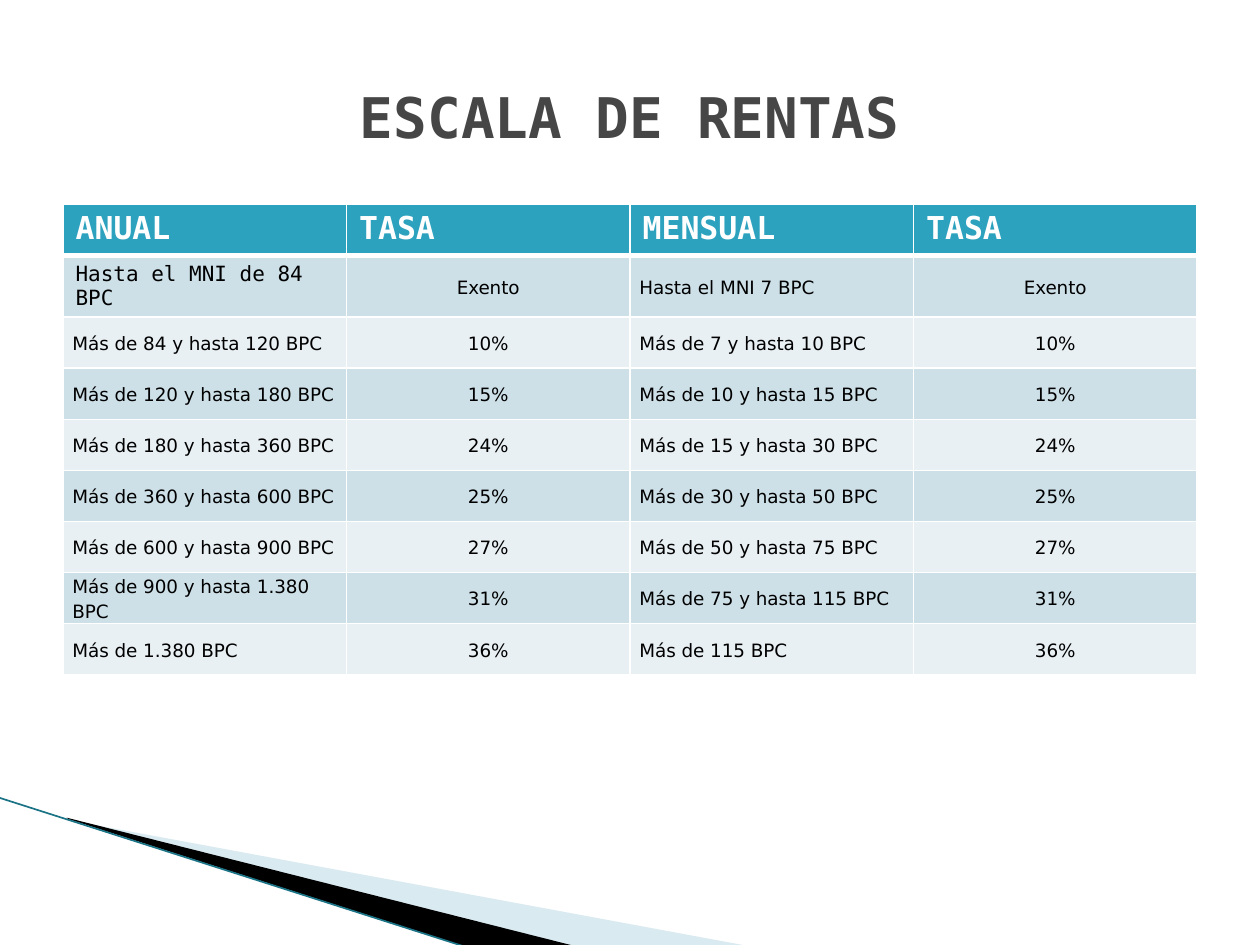
from dataclasses import dataclass
from typing import NamedTuple

from lxml import etree
from pptx import Presentation
from pptx.dml.color import RGBColor
from pptx.enum.shapes import MSO_CONNECTOR
from pptx.enum.text import MSO_ANCHOR, MSO_AUTO_SIZE, PP_ALIGN
from pptx.oxml.ns import qn
from pptx.util import Inches, Pt

LEFT, CENTER = PP_ALIGN.LEFT, PP_ALIGN.CENTER
TOP, MIDDLE = MSO_ANCHOR.TOP, MSO_ANCHOR.MIDDLE
STRAIGHT = MSO_CONNECTOR.STRAIGHT
TITLE_ONLY = 5


@dataclass(frozen=True)
class Theme:
    sans: str = "DejaVu Sans"
    mono: str = "DejaVu Sans Mono"
    title: str = "464646"
    header: str = "2DA2BF"
    bands: tuple[str, str] = ("CDE0E8", "E8F0F4")
    white: str = "FFFFFF"
    black: str = "000000"
    wedge: str = "A0CBDC"
    edge: str = "1B7386"
    title_size: float = 32
    header_size: float = 18
    lead_size: float = 12
    body_size: float = 10.5


class TextStyle(NamedTuple):
    font: str
    size: float
    color: str
    bold: bool = False
    align: PP_ALIGN = LEFT
    anchor: MSO_ANCHOR = TOP
    line_spacing: float = 1.0
    compact: bool = False  # narrow side margins, none above or below


class Wedge(NamedTuple):
    frame: tuple[float, float, float, float]  # left, top, width, height in inches
    points: tuple[tuple[float, float], ...]  # inches on the slide, may leave the frame
    color: str
    opacity: int = 100  # percent


class Bracket(NamedTuple):
    annual: str
    monthly: str
    rate: str


THEME = Theme()
WIDTH, HEIGHT = 10, 7.5
MARGIN = 0.05 * WIDTH
CONTENT_WIDTH = WIDTH - 2 * MARGIN
TITLE_TOP, TITLE_HEIGHT = 0.04 * HEIGHT, HEIGHT / 6
TABLE_TOP, TABLE_HEIGHT = 1.62, 3.65
COMPACT_MARGIN = Pt(5.4)

TITLE = TextStyle(THEME.mono, THEME.title_size, THEME.title, True, CENTER, MIDDLE)
HEADER = TextStyle(THEME.mono, THEME.header_size, THEME.white, True)
LEAD = TextStyle(THEME.mono, THEME.lead_size, THEME.black)
RANGE = TextStyle(THEME.sans, THEME.body_size, THEME.black, False, LEFT, MIDDLE, 1.15, True)
RATE = RANGE._replace(align=CENTER)

HEADINGS = ("ANUAL", "TASA", "MENSUAL", "TASA")
BRACKETS = (
    Bracket("Hasta el MNI de 84 BPC", "Hasta el MNI 7 BPC", "Exento"),
    Bracket("Más de 84 y hasta 120 BPC", "Más de 7 y hasta 10 BPC", "10%"),
    Bracket("Más de 120 y hasta 180 BPC", "Más de 10 y hasta 15 BPC", "15%"),
    Bracket("Más de 180 y hasta 360 BPC", "Más de 15 y hasta 30 BPC", "24%"),
    Bracket("Más de 360 y hasta 600 BPC", "Más de 30 y hasta 50 BPC", "25%"),
    Bracket("Más de 600 y hasta 900 BPC", "Más de 50 y hasta 75 BPC", "27%"),
    Bracket("Más de 900 y hasta 1.380 BPC", "Más de 75 y hasta 115 BPC", "31%"),
    Bracket("Más de 1.380 BPC", "Más de 115 BPC", "36%"),
)
WEDGES = (
    Wedge((0.78, 5.47, 4.16, 1.58),
          ((0.55, 6.51), (5.95, 7.51), (4.56, 7.51), (0.55, 6.5)), THEME.wedge, 40),
    Wedge((-0.06, 6.33, 4.16, 0.92),
          ((0.53, 6.49), (4.57, 7.51), (3.72, 7.52), (0.54, 6.5)), THEME.black),
)
EDGE = ((-0.01, 6.33), (3.71, 7.52))


def set_attributes(target, values: dict) -> None:
    for name, value in values.items():
        setattr(target, name, value)


def write_text(text_frame, text: str, style: TextStyle) -> None:
    paragraph = text_frame.paragraphs[0]
    set_attributes(paragraph, {"alignment": style.align, "line_spacing": style.line_spacing})
    run = paragraph.add_run()
    run.text = text
    set_attributes(run.font, {"name": style.font, "size": Pt(style.size), "bold": style.bold})
    run.font.color.rgb = RGBColor.from_string(style.color)


def add_title(slide, text: str) -> None:
    title = slide.shapes.title
    set_attributes(title, {
        "left": Inches(MARGIN), "top": Inches(TITLE_TOP),
        "width": Inches(CONTENT_WIDTH), "height": Inches(TITLE_HEIGHT),
    })
    set_attributes(title.text_frame, {
        "vertical_anchor": TITLE.anchor, "word_wrap": True, "auto_size": MSO_AUTO_SIZE.NONE,
    })
    write_text(title.text_frame, text, TITLE)


def fit_frame(shape, frame: tuple[float, float, float, float]) -> None:
    """Give the shape a new frame while its outline stays in place."""
    left, top, width, height = (Inches(value) for value in frame)
    shift_x, shift_y = shape.left - left, shape.top - top
    outline = shape._element.spPr.find(".//" + qn("a:pathLst"))[0]
    outline.set("w", str(width))
    outline.set("h", str(height))
    for point in outline.iter(qn("a:pt")):
        point.set("x", str(int(point.get("x")) + shift_x))
        point.set("y", str(int(point.get("y")) + shift_y))
    set_attributes(shape, {"left": left, "top": top, "width": width, "height": height})


def add_wedge(slide, wedge: Wedge) -> None:
    points = [(Inches(x), Inches(y)) for x, y in wedge.points]
    builder = slide.shapes.build_freeform(*points[0])
    builder.add_line_segments(points[1:], close=True)
    shape = builder.convert_to_shape()
    fit_frame(shape, wedge.frame)
    shape.shadow.inherit = False
    shape.fill.solid()
    shape.fill.fore_color.rgb = RGBColor.from_string(wedge.color)
    shape.line.fill.background()
    if wedge.opacity < 100:
        color = shape.fill._xPr.find(".//" + qn("a:srgbClr"))
        etree.SubElement(color, qn("a:alpha"), val=str(wedge.opacity * 1000))


def add_edge(slide) -> None:
    ends = [Inches(value) for point in EDGE for value in point]
    connector = slide.shapes.add_connector(STRAIGHT, *ends)
    connector.line.color.rgb = RGBColor.from_string(THEME.edge)
    connector.line.width = Pt(0.95)
    etree.SubElement(connector._element.spPr, qn("a:effectLst"))


def add_borders(cell, widths: dict[str, float]) -> None:
    properties = cell._tc.get_or_add_tcPr()
    for side, width in widths.items():
        line = etree.SubElement(properties, qn(f"a:ln{side}"), w=str(Pt(width)))
        fill = etree.SubElement(line, qn("a:solidFill"))
        etree.SubElement(fill, qn("a:srgbClr"), val=THEME.white)


def format_cell(cell, text: str, style: TextStyle, fill: str, borders: dict[str, float]) -> None:
    add_borders(cell, borders)
    cell.fill.solid()
    cell.fill.fore_color.rgb = RGBColor.from_string(fill)
    cell.vertical_anchor = style.anchor
    if style.compact:
        set_attributes(cell, {
            "margin_left": COMPACT_MARGIN, "margin_right": COMPACT_MARGIN,
            "margin_top": 0, "margin_bottom": 0,
        })
    write_text(cell.text_frame, text, style)


def add_rate_table(slide) -> None:
    row_count, column_count = len(BRACKETS) + 1, len(HEADINGS)
    table = slide.shapes.add_table(
        row_count, column_count, Inches(MARGIN), Inches(TABLE_TOP),
        Inches(CONTENT_WIDTH), Inches(TABLE_HEIGHT),
    ).table
    thin = {"L": 1, "R": 1, "T": 1, "B": 1}

    # Header row, with a thick rule below it
    for column, heading in enumerate(HEADINGS):
        format_cell(table.cell(0, column), heading, HEADER, THEME.header, thin | {"B": 3})

    # Tax brackets in alternating bands
    for row, bracket in enumerate(BRACKETS, start=1):
        texts = (bracket.annual, bracket.rate, bracket.monthly, bracket.rate)
        styles = (LEAD if row == 1 else RANGE, RATE, RANGE, RATE)
        for column, (text, style) in enumerate(zip(texts, styles)):
            format_cell(table.cell(row, column), text, style, THEME.bands[(row - 1) % 2], thin)


def main() -> None:
    presentation = Presentation()
    set_attributes(presentation, {"slide_width": Inches(WIDTH), "slide_height": Inches(HEIGHT)})
    slide = presentation.slides.add_slide(presentation.slide_layouts[TITLE_ONLY])

    # Corner decoration
    for wedge in WEDGES:
        add_wedge(slide, wedge)
    add_edge(slide)

    # Content
    add_rate_table(slide)
    add_title(slide, "ESCALA DE RENTAS")
    presentation.save("out.pptx")


if __name__ == "__main__":
    main()
